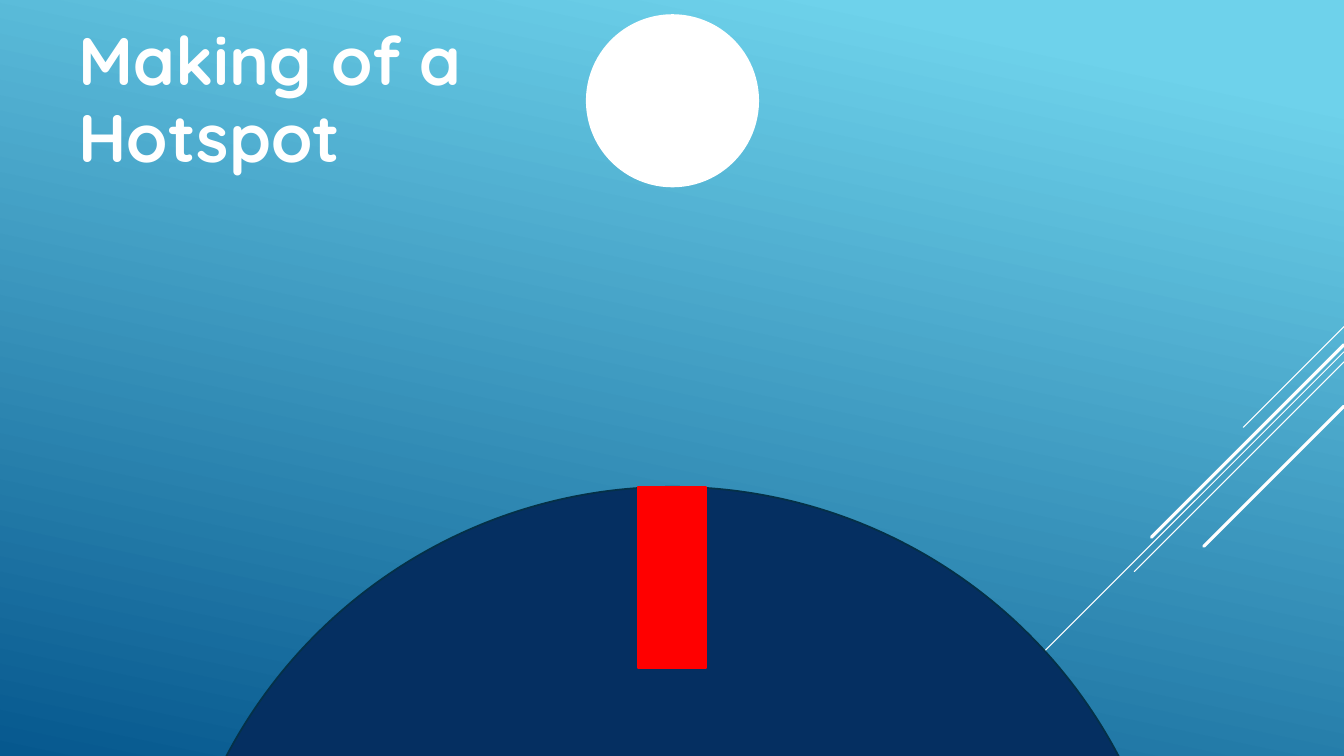
from dataclasses import dataclass

from lxml.etree import SubElement
from pptx import Presentation
from pptx.dml.color import RGBColor
from pptx.enum.shapes import MSO_CONNECTOR, MSO_SHAPE
from pptx.enum.text import MSO_ANCHOR, MSO_AUTO_SIZE, PP_ALIGN
from pptx.oxml.ns import qn
from pptx.util import Pt

SCALE = 9144
WIDTH, HEIGHT = 1333, 750


@dataclass(frozen=True)
class Theme:
    sky: str = "6ED2EB"
    deep: str = "06588E"
    white: str = "FFFFFF"
    earth: str = "052F61"
    rim: str = "043148"
    magma: str = "FF0000"
    font: str = "Quicksand"
    title: int = 48
    edge: float = 1.25
    thin: float = 0.75
    thick: float = 2.25


def px(*sizes):
    return [size * SCALE for size in sizes]


def tint(code):
    return RGBColor.from_string(code)


def write(frame, text, *, font, size, color, bold=False, align=PP_ALIGN.LEFT, spacing=1.0):
    frame.text = text
    for para in frame.paragraphs:
        para.alignment = align
        para.line_spacing = spacing
        para.font.name = font
        para.font.size = Pt(size)
        para.font.bold = bold
        para.font.color.rgb = tint(color)


class Canvas:
    def __init__(self, deck, theme):
        self.theme = theme
        self.slide = deck.slides.add_slide(deck.slide_layouts[5])

    def shade(self, angle, *stops):
        fill = self.slide.background.fill
        fill.gradient()
        fill.gradient_angle = angle
        for stop, (place, color) in zip(fill.gradient_stops, stops):
            stop.position = place
            stop.color.rgb = tint(color)

    def title(self, text, left, top, width, height):
        box = self.slide.shapes.title
        box.left, box.top, box.width, box.height = px(left, top, width, height)
        frame = box.text_frame
        frame.word_wrap = False
        frame.auto_size = MSO_AUTO_SIZE.NONE
        frame.vertical_anchor = MSO_ANCHOR.TOP
        frame.margin_left, frame.margin_top = px(10, 9)
        write(frame, text, font=self.theme.font, size=self.theme.title,
              color=self.theme.white, bold=True, spacing=0.95)

    def shape(self, kind, left, top, width, height, fill, edge):
        item = self.slide.shapes.add_shape(kind, *px(left, top, width, height))
        item.shadow.inherit = False
        item.fill.solid()
        item.fill.fore_color.rgb = tint(fill)
        item.line.color.rgb = tint(edge)
        item.line.width = Pt(self.theme.edge)

    def streak(self, top, run, weight):
        ends = px(WIDTH, top, WIDTH - run, top + run)
        line = self.slide.shapes.add_connector(MSO_CONNECTOR.STRAIGHT, *ends)
        line.line.color.rgb = tint(self.theme.white)
        line.line.width = Pt(weight)
        props = line._element.spPr
        props.find(qn("a:ln")).set("cap", "rnd")
        SubElement(props, qn("a:effectLst"))


def main():
    deck = Presentation()
    deck.slide_width, deck.slide_height = px(WIDTH, HEIGHT)
    theme = Theme()
    canvas = Canvas(deck, theme)
    canvas.shade(258, (0.1, theme.sky), (1.0, theme.deep))

    for top, run, weight in (
        (324, 100, theme.thin),
        (349, 326, theme.thin),
        (359, 208, theme.thin),
        (342, 191, theme.thick),
        (403, 139, theme.thick),
    ):
        canvas.streak(top, run, weight)

    canvas.shape(MSO_SHAPE.OVAL, 167, 483, 1000, 1000, theme.earth, theme.rim)
    canvas.shape(MSO_SHAPE.OVAL, 582, 15, 170, 170, theme.white, theme.white)
    canvas.shape(MSO_SHAPE.RECTANGLE, 633, 483, 67, 180, theme.magma, theme.magma)
    canvas.title("Making of a\nHotspot", 68, 15, 409, 172)
    deck.save("out.pptx")


if __name__ == "__main__":
    main()
